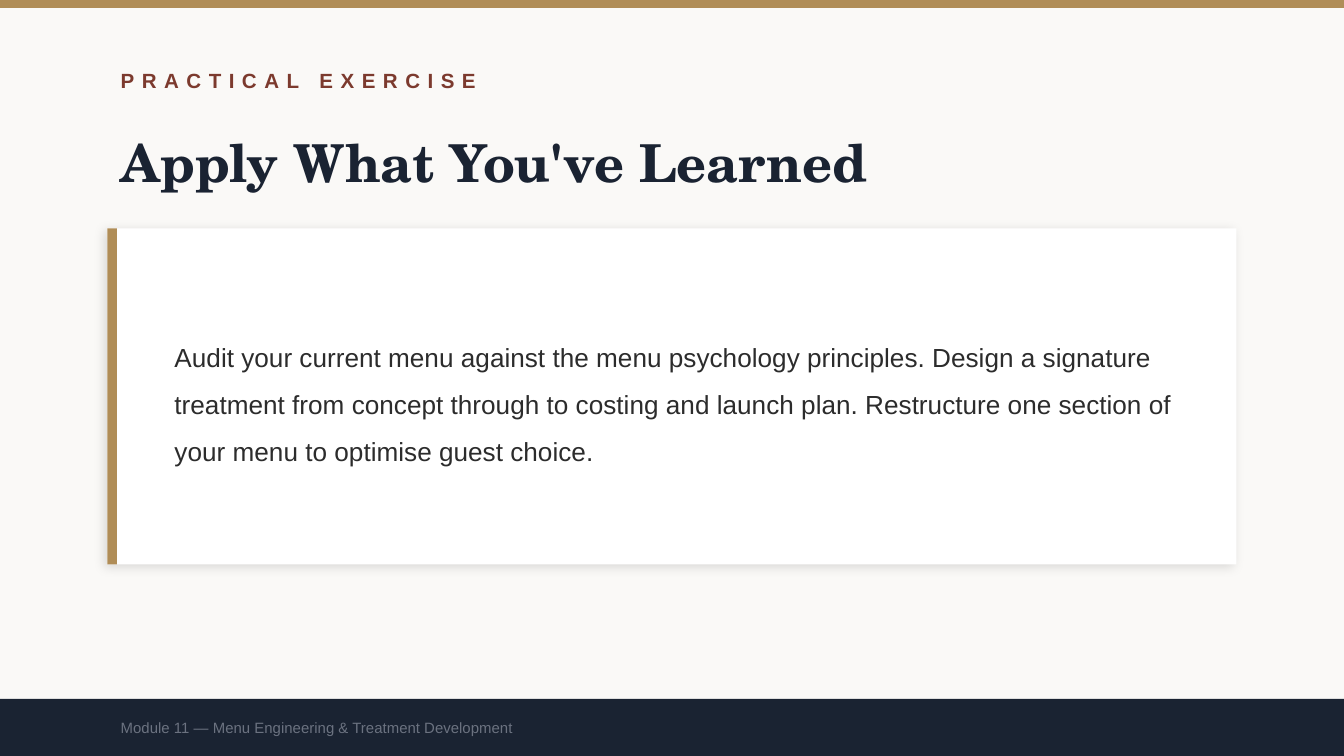
from lxml import etree
from pptx import Presentation
from pptx.dml.color import RGBColor
from pptx.enum.shapes import MSO_SHAPE
from pptx.enum.text import MSO_ANCHOR
from pptx.oxml.ns import qn
from pptx.util import Pt

RECTANGLE = MSO_SHAPE.RECTANGLE
MIDDLE = MSO_ANCHOR.MIDDLE

PAGE_WIDTH, PAGE_HEIGHT = 720, 405
MARGIN = 57.6
TEXT_WIDTH = 576
CARD_TOP, CARD_HEIGHT = 122.4, 180
FOOTER_TOP = 374.4
FOOTER_HEIGHT = PAGE_HEIGHT - FOOTER_TOP

GOLD = "B08D57"
NAVY = "1A2332"


def color(hex_string):
    return RGBColor.from_string(hex_string)


def add_bar(page, left, top, width, height, fill):
    """Add a plain filled rectangle without outline or shadow."""
    bar = page.shapes.add_shape(RECTANGLE, Pt(left), Pt(top), Pt(width), Pt(height))
    bar.shadow.inherit = False
    bar.fill.solid()
    bar.fill.fore_color.rgb = color(fill)
    bar.line.fill.background()
    return bar


def add_soft_shadow(shape, blur, distance, degrees, percent):
    effects = shape._element.spPr.find(qn("a:effectLst"))
    shadow = etree.SubElement(
        effects, qn("a:outerShdw"), blurRad=str(Pt(blur)), dist=str(Pt(distance)),
        dir=str(degrees * 60000), algn="bl", rotWithShape="0")
    tint = etree.SubElement(shadow, qn("a:srgbClr"), val="000000")
    etree.SubElement(tint, qn("a:alpha"), val=str(percent * 1000))


def add_text(page, left, top, width, height, text, size, fill,
             font="Arial", bold=False, tracking=0, line_spacing=None):
    """Add a vertically centred text box; tracking is in points."""
    box = page.shapes.add_textbox(Pt(left), Pt(top), Pt(width), Pt(height))
    frame = box.text_frame
    frame.word_wrap = True
    frame.vertical_anchor = MIDDLE
    para = frame.paragraphs[0]
    span = para.add_run()
    span.text = text
    if line_spacing:
        para.line_spacing = line_spacing
    para.font.name = font
    para.font.size = Pt(size)
    para.font.bold = bold
    para.font.color.rgb = color(fill)
    if tracking:
        span.font._element.set("spc", str(tracking * 100))


def main():
    deck = Presentation()
    deck.slide_width, deck.slide_height = Pt(PAGE_WIDTH), Pt(PAGE_HEIGHT)
    page = deck.slides.add_slide(deck.slide_layouts[6])
    page.background.fill.solid()
    page.background.fill.fore_color.rgb = color("FAF9F7")

    add_bar(page, 0, 0, PAGE_WIDTH, 4.32, GOLD)
    add_text(page, MARGIN, 28.8, TEXT_WIDTH, 28.8, "PRACTICAL EXERCISE",
             11, "7C3A2E", bold=True, tracking=4)
    add_text(page, MARGIN, 64.8, TEXT_WIDTH, 43.2, "Apply What You've Learned",
             28, NAVY, font="TeX Gyre Schola", bold=True)

    card = add_bar(page, MARGIN, CARD_TOP, PAGE_WIDTH - 2 * MARGIN, CARD_HEIGHT, "FFFFFF")
    add_soft_shadow(card, blur=6, distance=2, degrees=135, percent=12)
    add_bar(page, MARGIN, CARD_TOP, 5.04, CARD_HEIGHT, GOLD)
    add_text(page, 86.4, CARD_TOP + 14.4, 554.4, CARD_HEIGHT - 28.8,
             "Audit your current menu against the menu psychology principles. "
             "Design a signature treatment from concept through to costing and "
             "launch plan. Restructure one section of your menu to optimise "
             "guest choice.",
             14, "2C2C2C", line_spacing=1.5)

    add_bar(page, 0, FOOTER_TOP, PAGE_WIDTH, FOOTER_HEIGHT, NAVY)
    add_text(page, MARGIN, FOOTER_TOP, TEXT_WIDTH, FOOTER_HEIGHT,
             "Module 11 — Menu Engineering & Treatment Development", 8, "6B7280")

    deck.save("out.pptx")


if __name__ == "__main__":
    main()
